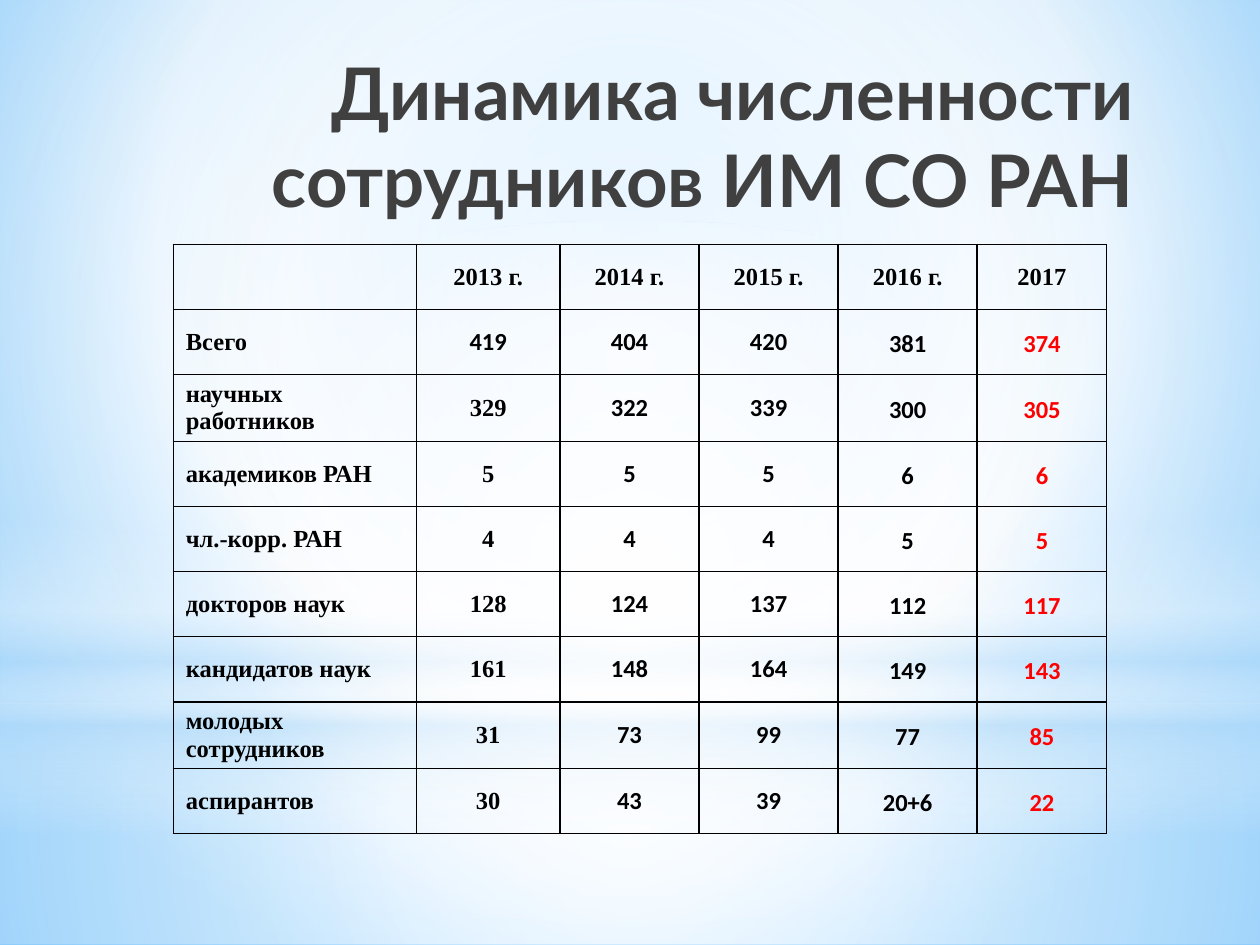
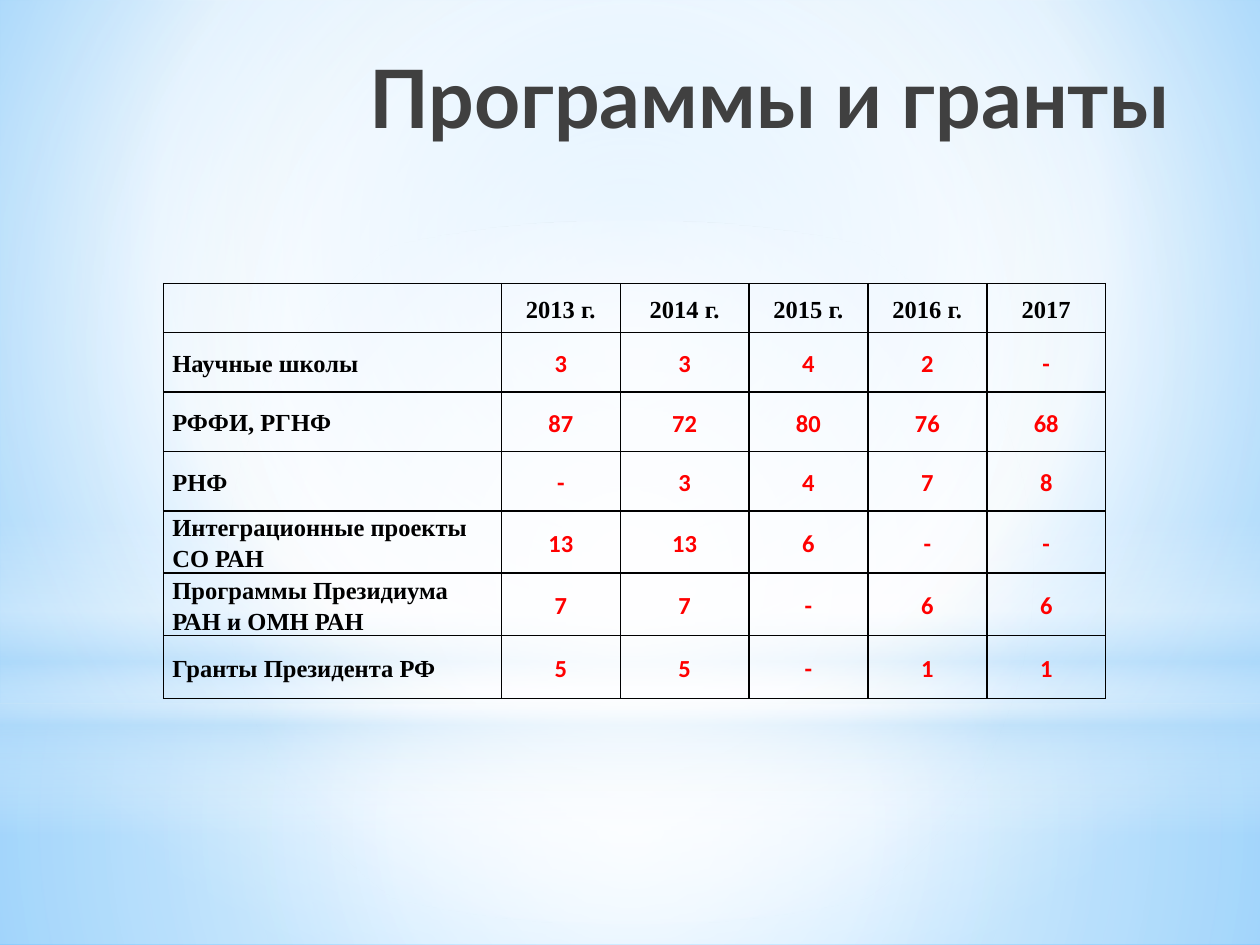
from lxml.etree import SubElement
from pptx import Presentation
from pptx.dml.color import RGBColor
from pptx.enum.shapes import MSO_SHAPE
from pptx.enum.text import MSO_ANCHOR, MSO_AUTO_SIZE, PP_ALIGN
from pptx.oxml import parse_xml
from pptx.oxml.ns import nsdecls, qn
from pptx.util import Pt

BLACK = RGBColor(0x00, 0x00, 0x00)
WHITE = RGBColor(0xFF, 0xFF, 0xFF)
RED = RGBColor(0xFF, 0x00, 0x00)
DARK_GREY = RGBColor(0x40, 0x40, 0x40)
SKY = RGBColor(0x9E, 0xD5, 0xFF)
DEEP_SKY = RGBColor(0x5B, 0xB9, 0xFF)
PALE_BLUE = RGBColor(0xB4, 0xDC, 0xFA)

TITLE_FONT = "Lato"
LABEL_FONT = "Times New Roman"
NUMBER_FONT = "Calibri"
TABLE_SIZE = 14

WIDTH, HEIGHT = 720, 540
HORIZON = 402
CENTRE = (50, 50, 50, 50)
YEARS = ["2013 г.", "2014 г.", "2015 г.", "2016 г.", "2017"]

# Gradient stops are (position, colour, opacity), all in percent
BACKGROUND = [(0, SKY, 100), (60, WHITE, 100), (100, DEEP_SKY, 100)]
GROUND = [(0, WHITE, 91), (37, WHITE, 76), (100, PALE_BLUE, 79)]
AIR = [(0, WHITE, 89), (48, WHITE, 62), (100, PALE_BLUE, 79)]
HAZE = [(0, WHITE, 0), (29, WHITE, 30), (45, PALE_BLUE, 40),
        (55, WHITE, 26), (65, PALE_BLUE, 60), (100, WHITE, 0)]
GLOW = [(0, WHITE, 100), (56, WHITE, 0)]

STAFF = [
    ["Всего", "419", "404", "420", "381", "374"],
    ["научных работников", "329", "322", "339", "300", "305"],
    ["академиков РАН", "5", "5", "5", "6", "6"],
    ["чл.-корр. РАН", "4", "4", "4", "5", "5"],
    ["докторов наук", "128", "124", "137", "112", "117"],
    ["кандидатов наук", "161", "148", "164", "149", "143"],
    ["молодых сотрудников", "31", "73", "99", "77", "85"],
    ["аспирантов", "30", "43", "39", "20+6", "22"],
]
GRANTS = [
    ["Научные школы", "3", "3", "4", "2", "-"],
    ["РФФИ, РГНФ", "87", "72", "80", "76", "68"],
    ["РНФ", "-", "3", "4", "7", "8"],
    ["Интеграционные проекты\nСО РАН", "13", "13", "6", "-", "-"],
    ["Программы Президиума РАН и ОМН РАН", "7", "7", "-", "6", "6"],
    ["Гранты Президента РФ", "5", "5", "-", "1", "1"],
]


def set_gradient(parent, stops, focus=None):
    """Replace the empty fill by a radial gradient, or a vertical one without focus."""
    gradient = parse_xml(f'<a:gradFill {nsdecls("a")} rotWithShape="1"/>')
    stop_list = SubElement(gradient, qn("a:gsLst"))
    for position, color, opacity in stops:
        stop = SubElement(stop_list, qn("a:gs"), pos=str(position * 1000))
        tone = SubElement(stop, qn("a:srgbClr"), val=str(color))
        if opacity < 100:
            SubElement(tone, qn("a:alpha"), val=str(opacity * 1000))
    if focus:
        route = SubElement(gradient, qn("a:path"), {"path": "circle"})
        sides = {side: str(share * 1000) for side, share in zip("ltrb", focus)}
        SubElement(route, qn("a:fillToRect"), sides)
    else:
        SubElement(gradient, qn("a:lin"), ang="5400000", scaled="0")
    parent.replace(parent.find(qn("a:noFill")), gradient)


def staff_style(row, column):
    """Font, colour and line spacing of a cell in the staff table."""
    spacing = 1.15 if row and column >= 4 else 1
    total_2013 = (row, column) == (1, 1)
    if row == 0 or (column <= 1 and not total_2013):
        return LABEL_FONT, BLACK, spacing
    return NUMBER_FONT, RED if column == 5 else BLACK, spacing


def grants_style(row, column):
    """Font, colour and line spacing of a cell in the grants table."""
    if row == 0 or column == 0:
        return LABEL_FONT, BLACK, 1.15
    return NUMBER_FONT, RED, 1.15


class SlideMaker:
    def __init__(self):
        self.deck = Presentation()
        self.deck.slide_width, self.deck.slide_height = Pt(WIDTH), Pt(HEIGHT)
        self.page = None

    def add_page(self):
        self.page = self.deck.slides.add_slide(self.deck.slide_layouts[5])
        # Sky backdrop
        self.page.background.fill.background()
        set_gradient(self.page.element.find(f".//{qn('p:bgPr')}"),
                     BACKGROUND, (20, 10, 20, 60))
        self.backdrop(MSO_SHAPE.RECTANGLE, HORIZON, HEIGHT - HORIZON, GROUND, CENTRE)
        self.backdrop(MSO_SHAPE.RECTANGLE, 0, HORIZON, AIR, CENTRE)
        self.backdrop(MSO_SHAPE.RECTANGLE, 297, 180, HAZE)
        self.backdrop(MSO_SHAPE.OVAL, 126, HORIZON, GLOW, CENTRE)

    def backdrop(self, kind, top, height, stops, focus=None):
        shape = self.page.shapes.add_shape(kind, 0, Pt(top), Pt(WIDTH), Pt(height))
        shape.shadow.inherit = False
        shape.line.fill.background()
        shape.fill.background()
        set_gradient(shape.element.spPr, stops, focus)

    def title(self, text, left, size, first_indent=0):
        box = self.page.shapes.title
        box.left, box.top = Pt(left), Pt(24)
        box.width, box.height = Pt(675 - left), Pt(96)
        frame = box.text_frame
        frame.text = text
        frame.word_wrap = True
        frame.auto_size = MSO_AUTO_SIZE.NONE
        frame.vertical_anchor = MSO_ANCHOR.TOP
        frame.paragraphs[0]._p.get_or_add_pPr().set("marR", str(Pt(first_indent)))
        for para in frame.paragraphs:
            para.alignment = PP_ALIGN.RIGHT
            for span in para.runs:
                span.font.name, span.font.size = TITLE_FONT, Pt(size)
                span.font.bold = True
                span.font.color.rgb = DARK_GREY
        # Bring the title in front of the backdrop
        box.element.getparent().append(box.element)

    def table(self, rows, left, top, widths, heights, style, label_margins, margins):
        frame = self.page.shapes.add_table(
            len(rows), len(widths), Pt(left), Pt(top),
            Pt(sum(widths)), Pt(sum(heights)))
        table = frame.table
        table.first_row = table.horz_banding = False
        for column, width in zip(table.columns, widths):
            column.width = Pt(width)
        for row, height in zip(table.rows, heights):
            row.height = Pt(height)
        for r, values in enumerate(rows):
            for c, value in enumerate(values):
                self.cell(table.cell(r, c), value, style(r, c),
                          PP_ALIGN.CENTER if c else PP_ALIGN.LEFT,
                          label_margins if c == 0 and r else margins)

    def cell(self, cell, text, style, alignment, margins):
        font, color, spacing = style
        side, edge = margins
        cell.margin_left = cell.margin_right = Pt(side)
        cell.margin_top = cell.margin_bottom = Pt(edge)
        cell.vertical_anchor = MSO_ANCHOR.MIDDLE
        self.borders(cell)
        cell.fill.background()
        cell.text_frame.text = text
        for para in cell.text_frame.paragraphs:
            para.alignment = alignment
            para.line_spacing = spacing
            for span in para.runs:
                span.font.name, span.font.size = font, Pt(TABLE_SIZE)
                span.font.bold = True
                span.font.color.rgb = color

    def borders(self, cell):
        properties = cell._tc.get_or_add_tcPr()
        for side in "LRTB":
            line = SubElement(properties, qn(f"a:ln{side}"), w=str(Pt(1)))
            fill = SubElement(line, qn("a:solidFill"))
            SubElement(fill, qn("a:srgbClr"), val=str(BLACK))


def main():
    maker = SlideMaker()
    header = [""] + YEARS

    # Staff numbers
    maker.add_page()
    maker.title("Динамика численности\nсотрудников ИМ СО РАН", 45, 41.4, first_indent=20)
    maker.table([header] + STAFF, 99, 139.7, [139, 82, 79.5, 79.5, 79.5, 74],
                [37.2] * 9, staff_style, label_margins=(7.2, 3.6), margins=(0, 0))

    # Programmes and grants
    maker.add_page()
    maker.title("Программы и гранты", 139, 46)
    maker.table([header] + GRANTS, 93.5, 162, [193, 68, 73.5, 68, 68, 68],
                [28, 34, 34, 34, 28, 28, 36], grants_style,
                label_margins=(5, 0), margins=(5, 0))

    maker.deck.save("out.pptx")


if __name__ == "__main__":
    main()
